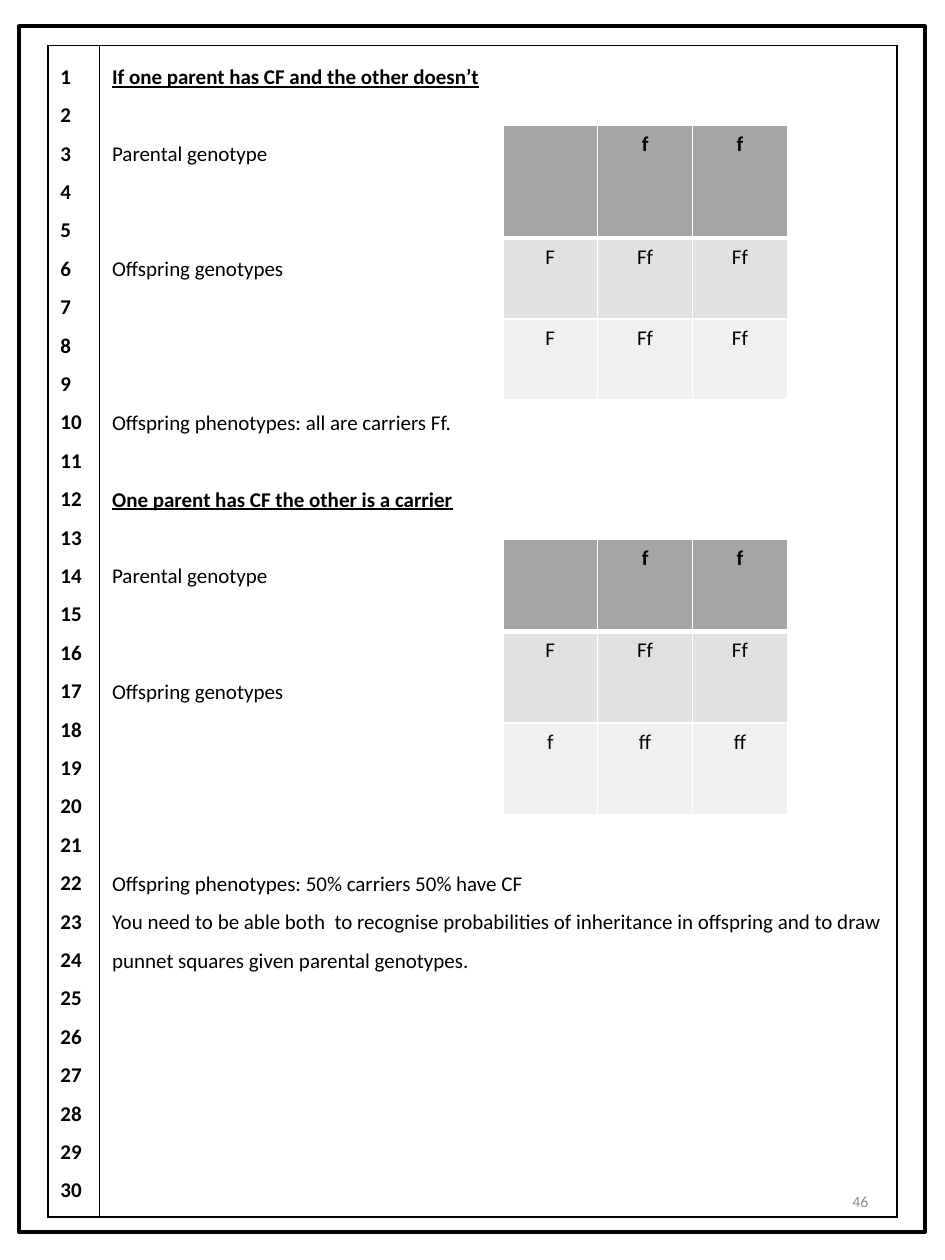
from lxml import etree
from pptx import Presentation
from pptx.dml.color import RGBColor
from pptx.enum.shapes import MSO_SHAPE
from pptx.enum.text import MSO_ANCHOR, PP_ALIGN
from pptx.oxml.ns import qn
from pptx.util import Inches, Pt

LINE = 21.97  # height in points of one 12 pt line at 1.5 spacing


def add_text(tf, text, size=12, color="000000", bold=False, underline=False,
             align=PP_ALIGN.LEFT, spacing=None, before=0):
    p = tf.paragraphs[0] if not tf.text else tf.add_paragraph()
    p.alignment = align
    p.line_spacing = spacing
    p.space_before = Pt(before)
    r = p.add_run()
    r.text = text
    r.font.name = "Calibri"
    r.font.size = Pt(size)
    r.font.bold = bold
    r.font.underline = underline
    r.font.color.rgb = RGBColor.from_string(color)


def style_cell(cell, line, fill=None, top=1, bottom=1):
    if fill:
        cell.fill.solid()
        cell.fill.fore_color.rgb = RGBColor.from_string(fill)
    else:
        cell.fill.background()
    tcPr = cell._tc.get_or_add_tcPr()
    for i, (side, width) in enumerate(zip("LRTB", (1, 1, top, bottom))):
        ln = etree.Element(qn(f"a:ln{side}"), w=str(Pt(width)))
        solid = etree.SubElement(ln, qn("a:solidFill"))
        etree.SubElement(solid, qn("a:srgbClr"), val=line)
        tcPr.insert(i, ln)


prs = Presentation()
prs.slide_width, prs.slide_height = Inches(7.5), Inches(10)
slide = prs.slides.add_slide(prs.slide_layouts[6])

# Page frame
sp = slide.shapes.add_shape(MSO_SHAPE.RECTANGLE, Inches(0.15), Inches(0.21),
                            Inches(7.19), Inches(9.57))
sp.shadow.inherit = False
sp.fill.background()
sp.line.color.rgb = RGBColor.from_string("000000")
sp.line.width = Pt(2.25)

# Ruled page: line numbers beside the notes
page = slide.shapes.add_table(1, 2, Inches(0.38), Inches(0.36),
                              Inches(6.74), Inches(9.3)).table
page.first_row = page.horz_banding = False
for col, width in zip(page.columns, (0.41, 6.33)):
    col.width = Inches(width)
numbers, notes = page.cell(0, 0), page.cell(0, 1)
for cell in (numbers, notes):
    style_cell(cell, "000000")
for n in range(1, 31):
    add_text(numbers.text_frame, str(n), bold=True, spacing=1.5)

# Each note: line number it starts on, text, is it a heading
note_lines = [
    (1, "If one parent has CF and the other doesn’t", True),
    (3, "Parental genotype", False),
    (6, "Offspring genotypes", False),
    (10, "Offspring phenotypes: all are carriers Ff.", False),
    (12, "One parent has CF the other is a carrier", True),
    (14, "Parental genotype", False),
    (17, "Offspring genotypes", False),
    (22, "Offspring phenotypes: 50% carriers 50% have CF", False),
    (23, "You need to be able both  to recognise probabilities of inheritance in "
         "offspring and to draw punnet squares given parental genotypes.", False),
]
previous = 0
for number, text, heading in note_lines:
    add_text(notes.text_frame, text, bold=heading, underline=heading,
             spacing=1.5, before=(number - previous - 1) * LINE)
    previous = number

# Punnett squares: top, row heights, gametes and offspring
squares = [
    (0.99, (0.9, 0.64, 0.64),
     [("", "f", "f"), ("F", "Ff", "Ff"), ("F", "Ff", "Ff")]),
    (4.28, (0.73, 0.73, 0.73),
     [("", "f", "f"), ("F", "Ff", "Ff"), ("f", "ff", "ff")]),
]
row_fills = ("A5A5A5", "E1E1E1", "F0F0F0")
for top, heights, rows in squares:
    square = slide.shapes.add_table(3, 3, Inches(3.99), Inches(top),
                                    Inches(2.26), Inches(sum(heights))).table
    for i, (height, row) in enumerate(zip(heights, rows)):
        square.rows[i].height = Inches(height)
        for j, text in enumerate(row):
            cell = square.cell(i, j)
            style_cell(cell, "FFFFFF", row_fills[i],
                       top=3 if i == 1 else 1, bottom=3 if i == 0 else 1)
            if text:
                add_text(cell.text_frame, text, bold=i == 0,
                         align=PP_ALIGN.CENTER)

# Page number
tf = slide.shapes.add_textbox(Inches(5.3), Inches(9.27),
                              Inches(1.69), Inches(0.53)).text_frame
tf.word_wrap = True
tf.vertical_anchor = MSO_ANCHOR.MIDDLE
add_text(tf, "46", size=9, color="8C8C8C", align=PP_ALIGN.RIGHT)

prs.save("out.pptx")
